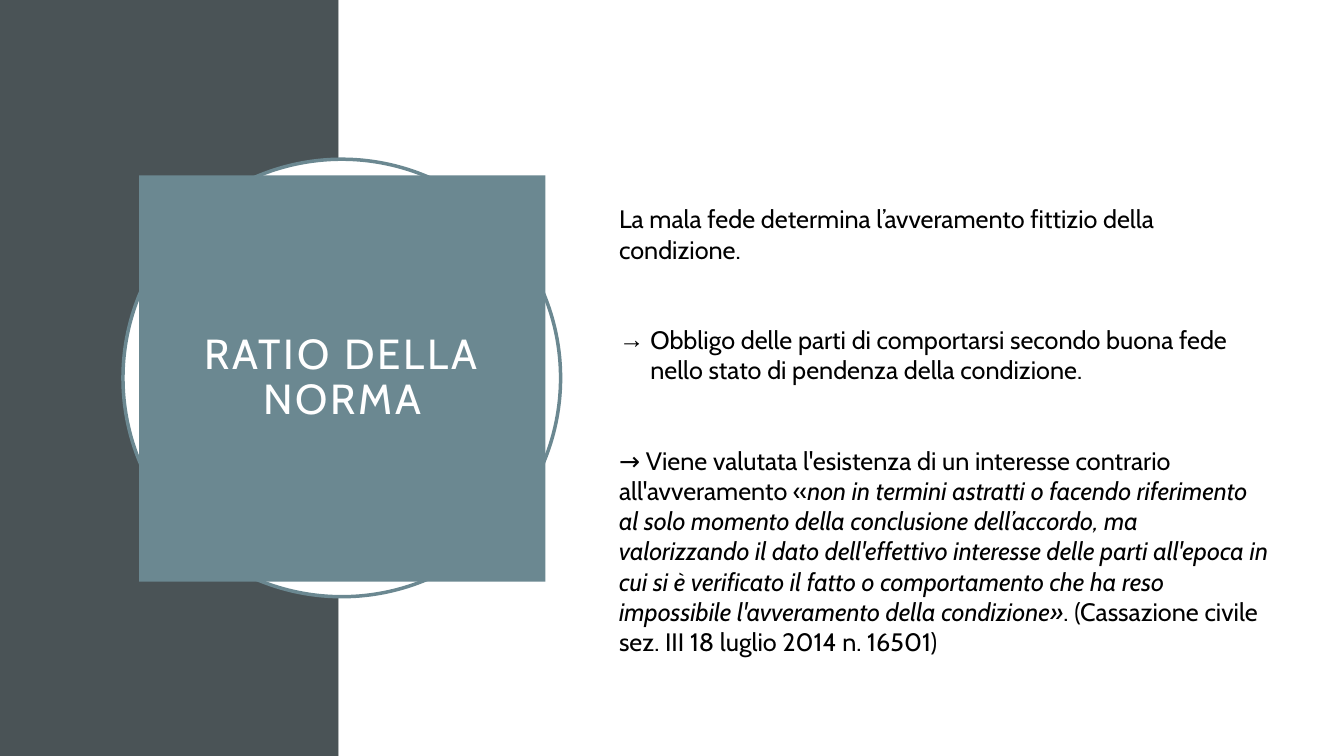
from dataclasses import dataclass

from lxml import etree
from pptx import Presentation
from pptx.dml.color import RGBColor
from pptx.enum.shapes import MSO_SHAPE
from pptx.enum.text import MSO_ANCHOR, MSO_AUTO_SIZE, PP_ALIGN
from pptx.oxml.ns import qn
from pptx.util import Inches, Pt

RECT, OVAL = MSO_SHAPE.RECTANGLE, MSO_SHAPE.OVAL
TOP, MIDDLE = MSO_ANCHOR.TOP, MSO_ANCHOR.MIDDLE
LEFT, CENTER = PP_ALIGN.LEFT, PP_ALIGN.CENTER
NO_AUTOFIT = MSO_AUTO_SIZE.NONE
FONT = "Cabin"
SLATE, TEAL, WHITE, BLACK = "4A5356", "6B8891", "FFFFFF", "000000"


@dataclass
class Panel:
    kind: int
    box: tuple[float, float, float, float]
    fill: str
    line: str | None = None


@dataclass
class Paragraph:
    runs: list[tuple[str, bool]]
    bullet: str | None = None
    before: float = 0


PANELS = [
    Panel(RECT, (0, 0, 3.36, 7.5), SLATE),
    Panel(RECT, (3.36, 0, 9.97, 7.5), WHITE),
    Panel(OVAL, (1.22, 1.58, 4.34, 4.34), WHITE, TEAL),
]

PARAGRAPHS = [
    Paragraph([("La mala fede determina l’avveramento fittizio della condizione.", False)]),
    Paragraph([("Obbligo delle parti di comportarsi secondo buona fede nello stato di "
                "pendenza della condizione.", False)], "→", 43),
    Paragraph([
        ("→ Viene valutata l'esistenza di un interesse contrario all'avveramento «", False),
        ("non in termini astratti o facendo riferimento al solo momento della conclusione "
         "dell’accordo, ma valorizzando il dato dell'effettivo interesse delle parti "
         "all'epoca in cui si è verificato il fatto o comportamento che ha reso impossibile "
         "l'avveramento della condizione»", True),
        (". (Cassazione civile sez. III 18 luglio 2014 n. 16501)", False),
    ], before=43),
]


def rgb(color: str) -> RGBColor:
    return RGBColor.from_string(color)


def place(sp, box: tuple[float, float, float, float]) -> None:
    sp.left, sp.top, sp.width, sp.height = map(Inches, box)


def format_run(r, size: float, color: str, italic: bool = False) -> None:
    r.font.name = FONT
    r.font.size = Pt(size)
    r.font.italic = italic
    r.font.color.rgb = rgb(color)


def add_panel(s, panel: Panel) -> None:
    sp = s.shapes.add_shape(panel.kind, *map(Inches, panel.box))
    sp.shadow.inherit = False
    sp.fill.solid()
    sp.fill.fore_color.rgb = rgb(panel.fill)
    if panel.line:
        sp.line.color.rgb = rgb(panel.line)
        sp.line.width = Pt(2.5)
    else:
        sp.line.fill.background()


def set_bullet(p, char: str | None) -> None:
    pPr = p._p.get_or_add_pPr()
    indent = Inches(0.31) if char else 0
    pPr.set("marL", str(indent))
    pPr.set("indent", str(-indent))
    if char:
        etree.SubElement(pPr, qn("a:buFont")).set("typeface", "Arial")
        etree.SubElement(pPr, qn("a:buChar")).set("char", char)
    else:
        etree.SubElement(pPr, qn("a:buNone"))


def fill_title(sp) -> None:
    place(sp, (1.38, 1.74, 4.03, 4.03))
    sp.fill.solid()
    sp.fill.fore_color.rgb = rgb(TEAL)
    tf = sp.text_frame
    tf.text = "RATIO DELLA NORMA"
    tf.word_wrap = True
    tf.auto_size = NO_AUTOFIT
    tf.vertical_anchor = MIDDLE
    tf.margin_left = tf.margin_right = tf.margin_top = tf.margin_bottom = Inches(0.2)
    p = tf.paragraphs[0]
    p.alignment = CENTER
    p.line_spacing = 0.9
    r = p.runs[0]
    format_run(r, 30, WHITE)
    r._r.get_or_add_rPr().set("spc", "200")


def fill_body(sp, paragraphs: list[Paragraph]) -> None:
    place(sp, (6.04, 1.97, 6.67, 4.7))
    tf = sp.text_frame
    tf.word_wrap = True
    tf.auto_size = NO_AUTOFIT
    tf.vertical_anchor = TOP
    for i, item in enumerate(paragraphs):
        p = tf.add_paragraph() if i else tf.paragraphs[0]
        p.alignment = LEFT
        p.line_spacing = 1.0
        p.space_before = Pt(item.before)
        set_bullet(p, item.bullet)
        for text, italic in item.runs:
            r = p.add_run()
            r.text = text
            format_run(r, 18, BLACK, italic)


def main() -> None:
    prs = Presentation()
    prs.slide_width, prs.slide_height = Inches(13.33), Inches(7.5)
    s = prs.slides.add_slide(prs.slide_layouts[1])
    title, body = s.placeholders
    for panel in PANELS:
        add_panel(s, panel)
    fill_title(title)
    fill_body(body, PARAGRAPHS)
    for sp in (title, body):
        s.shapes.element.append(sp.element)
    prs.save("out.pptx")


if __name__ == "__main__":
    main()
